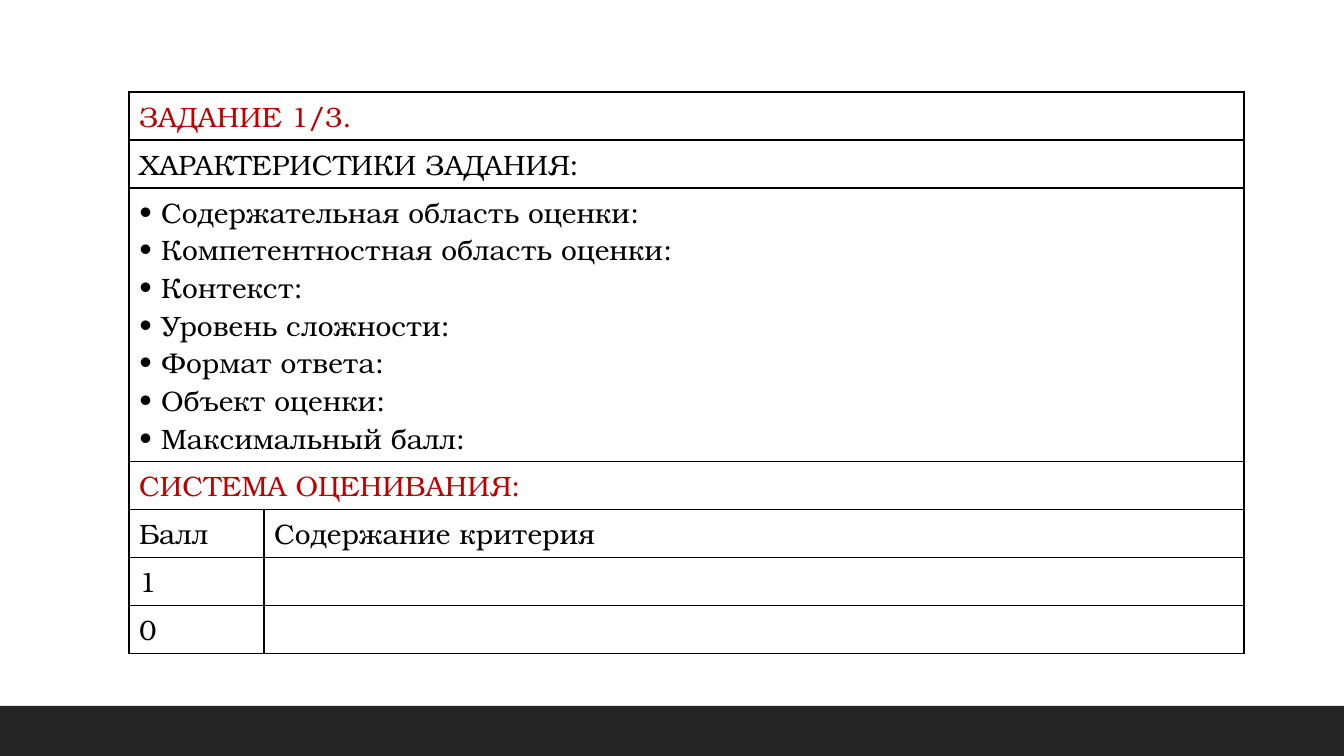
from lxml import etree
from pptx import Presentation
from pptx.dml.color import RGBColor
from pptx.enum import shapes, text
from pptx.oxml import ns
from pptx.util import Pt

EMU_PER_PX = 914400 / 100.8
FONT = "TeX Gyre Bonum"
BLACK, RED, DARK, WHITE = "000000", "C00000", "262626", "FFFFFF"
ROW, BULLET_ROW = 48, 273
BULLET_INDENT = 22

CHARACTERISTICS = [
    "Содержательная область оценки:",
    "Компетентностная область оценки:",
    "Контекст:",
    "Уровень сложности:",
    "Формат ответа:",
    "Объект оценки:",
    "Максимальный балл:",
]
# Each row: cell texts, colour; a single text spans both columns
ROWS = [
    (["ЗАДАНИЕ 1/3."], RED),
    (["ХАРАКТЕРИСТИКИ ЗАДАНИЯ:"], BLACK),
    (["\n".join(CHARACTERISTICS)], BLACK),
    (["СИСТЕМА ОЦЕНИВАНИЯ:"], RED),
    (["Балл", "Содержание критерия"], BLACK),
    (["1", ""], BLACK),
    (["0", ""], BLACK),
]


def px(length):
    return round(length * EMU_PER_PX)


def paint(fill, color):
    fill.solid()
    fill.fore_color.rgb = RGBColor.from_string(color)


def add_borders(cell):
    properties = cell._tc.get_or_add_tcPr()
    for index, side in enumerate(("lnL", "lnR", "lnT", "lnB")):
        line = etree.Element(ns.qn(f"a:{side}"), w=str(Pt(1)))
        solid = etree.SubElement(line, ns.qn("a:solidFill"))
        etree.SubElement(solid, ns.qn("a:srgbClr"), val=BLACK)
        properties.insert(index, line)


def add_bullet(paragraph):
    properties = paragraph._p.get_or_add_pPr()
    properties.set("marL", str(px(BULLET_INDENT)))
    properties.set("indent", str(-px(BULLET_INDENT)))
    etree.SubElement(properties, ns.qn("a:buFont"), typeface=FONT)
    etree.SubElement(properties, ns.qn("a:buChar"), char="•")


def write_cell(cell, wording, color):
    cell.text_frame.text = wording
    cell.vertical_anchor = text.MSO_ANCHOR.TOP
    bulleted = len(cell.text_frame.paragraphs) > 1
    for paragraph in cell.text_frame.paragraphs:
        if bulleted:
            add_bullet(paragraph)
        for run in paragraph.runs:
            run.font.name = FONT
            run.font.size = Pt(20)
            paint(run.font.fill, color)


# Dark band along the bottom edge
def add_footer_band(slide, left, top, width, height):
    band = slide.shapes.add_shape(
        shapes.MSO_SHAPE.RECTANGLE, px(left), px(top), px(width), px(height))
    band.shadow.inherit = False
    paint(band.fill, DARK)
    band.line.fill.background()


# Task description and scoring table
def add_task_table(slide, left, top, width, score_width):
    heights = [BULLET_ROW if "\n" in texts[0] else ROW for texts, _ in ROWS]
    table = slide.shapes.add_table(
        len(ROWS), 2, px(left), px(top), px(width), px(sum(heights))).table
    table.first_row = table.horz_banding = False
    table.columns[0].width = px(score_width)
    table.columns[1].width = px(width - score_width)

    for index, ((texts, color), height) in enumerate(zip(ROWS, heights)):
        row = table.rows[index]
        row.height = px(height)
        for cell in row.cells:
            paint(cell.fill, WHITE)
            add_borders(cell)
        if len(texts) == 1:
            row.cells[0].merge(row.cells[1])
        for cell, wording in zip(row.cells, texts):
            write_cell(cell, wording, color)


def main():
    deck = Presentation()
    deck.slide_width, deck.slide_height = px(1344), px(756)
    slide = deck.slides.add_slide(deck.slide_layouts[6])
    paint(slide.background.fill, WHITE)
    add_footer_band(slide, 0, 706, 1344, 50)
    add_task_table(slide, 129, 92, 1115, 135)
    deck.save("out.pptx")


if __name__ == "__main__":
    main()
